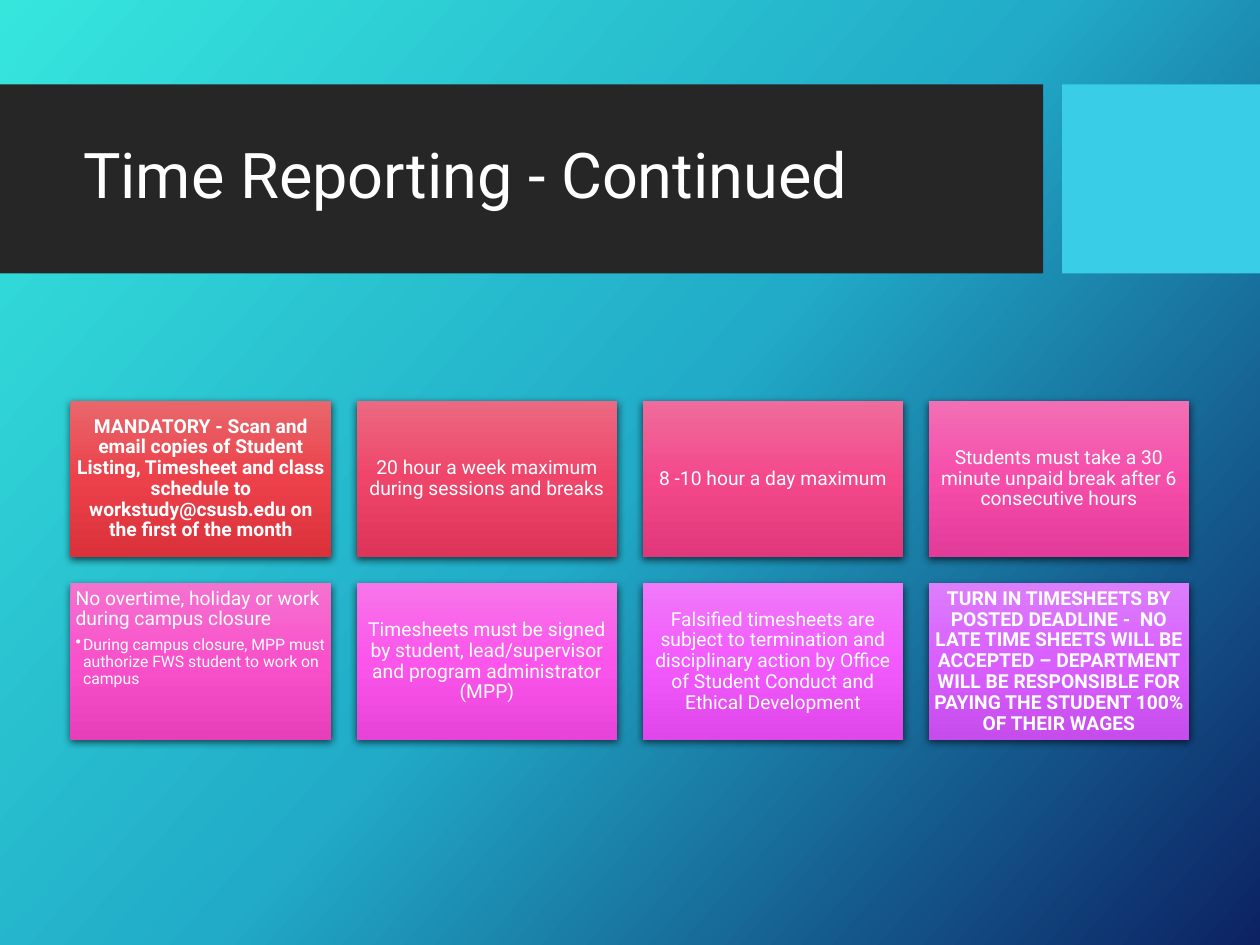
from pptx import Presentation
from pptx.dml.color import RGBColor
from pptx.enum.shapes import MSO_SHAPE as Shape
from pptx.enum.text import MSO_ANCHOR as Anchor, MSO_AUTO_SIZE as AutoSize, PP_ALIGN as Align
from pptx.oxml.ns import qn
from pptx.util import Inches, Pt
from lxml.etree import SubElement

FONT = "Roboto"
WHITE = "FFFFFF"
COLUMNS = 4
CARD_LEFT, CARD_TOP = 0.56, 3.18
CARD_WIDTH, CARD_HEIGHT = 2.07, 1.24
STEP_X, STEP_Y = 2.27, 1.45

CARDS = [
    ("MANDATORY - Scan and email copies of Student Listing, Timesheet and class "
     "schedule to workstudy@csusb.edu on the first of the month",
     "", True, ("E9676C", "EC414A", "DA313A")),
    ("20 hour a week maximum during sessions and breaks",
     "", False, ("EC6982", "EF456B", "DD345A")),
    ("8 -10 hour a day maximum",
     "", False, ("EF6C9B", "F3498B", "E0387A")),
    ("Students must take a 30 minute unpaid break after 6 consecutive hours",
     "", False, ("F26FB4", "F64DAB", "E33B99")),
    ("No overtime, holiday or work during campus closure",
     "During campus closure, MPP must authorize FWS student to work on campus",
     False, ("F472CF", "F951CB", "E63FB9")),
    ("Timesheets must be signed by student, lead/supervisor and program administrator (MPP)",
     "", False, ("F775E9", "FB55EB", "E843D8")),
    ("Falsified timesheets are subject to termination and disciplinary action by "
     "Office of Student Conduct and Ethical Development",
     "", False, ("F079F9", "F35AFE", "DF47EA")),
    ("TURN IN TIMESHEETS BY POSTED DEADLINE -  NO LATE TIME SHEETS WILL BE ACCEPTED – "
     "DEPARTMENT WILL BE RESPONSIBLE FOR PAYING THE STUDENT 100% OF THEIR WAGES",
     "", True, ("DC7DFC", "D960FF", "C64CEC")),
]


def color(value):
    return RGBColor.from_string(value)


def paint_gradient(fill, element, colors, angle):
    fill.gradient()
    fill.gradient_angle = 360 - angle
    stops = next(element.iter(qn("a:gsLst")))
    for stop in list(stops):
        stops.remove(stop)
    for position, value in zip((0, 50000, 100000), colors):
        stop = SubElement(stops, qn("a:gs"), pos=str(position))
        SubElement(stop, qn("a:srgbClr"), val=value)


def add_shadow(shape):
    effects = shape._element.spPr.find(qn("a:effectLst"))
    shadow = SubElement(effects, qn("a:outerShdw"), blurRad=str(Pt(4.5)),
                        dist=str(Pt(1.5)), dir="5400000", algn="ctr", rotWithShape="0")
    black = SubElement(shadow, qn("a:srgbClr"), val="000000")
    SubElement(black, qn("a:alpha"), val="63000")


def add_rectangle(page, left, top, width, height):
    shape = page.shapes.add_shape(Shape.RECTANGLE, Inches(left), Inches(top),
                                  Inches(width), Inches(height))
    shape.shadow.inherit = False
    shape.line.fill.background()
    return shape


def add_bar(page, left, width, value):
    bar = add_rectangle(page, left, 0.67, width, 1.5)
    bar.fill.solid()
    bar.fill.fore_color.rgb = color(value)


def add_bullet(para):
    properties = para._p.get_or_add_pPr()
    properties.set("marL", str(Inches(0.06)))
    properties.set("indent", str(Inches(-0.06)))
    SubElement(properties, qn("a:buChar"), char="•")


def style_para(para, size, align, after=0, bold=False):
    para.alignment = align
    para.line_spacing = 0.9
    para.space_after = Pt(after)
    para.font.name = FONT
    para.font.size = Pt(size)
    para.font.bold = bold
    para.font.color.rgb = color(WHITE)


def add_title(page, text):
    title = page.shapes.title
    title.left, title.top = Inches(0.56), Inches(0.82)
    title.width, title.height = Inches(7.89), Inches(1.18)
    frame = title.text_frame
    frame.text = text
    frame.auto_size = AutoSize.NONE
    frame.vertical_anchor = Anchor.MIDDLE
    style_para(frame.paragraphs[0], 36, Align.LEFT)
    page.shapes._spTree.append(title._element)


def add_card(page, index, text, detail, bold, colors):
    row, column = divmod(index, COLUMNS)
    card = add_rectangle(page, CARD_LEFT + column * STEP_X, CARD_TOP + row * STEP_Y,
                         CARD_WIDTH, CARD_HEIGHT)
    paint_gradient(card.fill, card._element, colors, 90)
    add_shadow(card)
    frame = card.text_frame
    frame.word_wrap = True
    frame.margin_left = frame.margin_right = Inches(0.04)
    frame.margin_top = frame.margin_bottom = Inches(0.04)
    frame.vertical_anchor = Anchor.TOP if detail else Anchor.MIDDLE
    frame.text = text
    style_para(frame.paragraphs[0], 11, Align.LEFT if detail else Align.CENTER, 3.85, bold)
    if detail:
        para = frame.add_paragraph()
        para.text = detail
        para.level = 1
        add_bullet(para)
        style_para(para, 9, Align.LEFT, 1.35)


def main():
    deck = Presentation()
    deck.slide_width, deck.slide_height = Inches(10), Inches(7.5)
    page = deck.slides.add_slide(deck.slide_layouts[5])
    paint_gradient(page.background.fill, page._element, ("36E6DD", "21ABC8", "0C2263"), 42)
    add_bar(page, 0, 8.28, "262626")
    add_bar(page, 8.43, 1.57, "39CDE7")
    add_title(page, "Time Reporting - Continued")
    for index, card in enumerate(CARDS):
        add_card(page, index, *card)
    deck.save("out.pptx")


if __name__ == "__main__":
    main()
